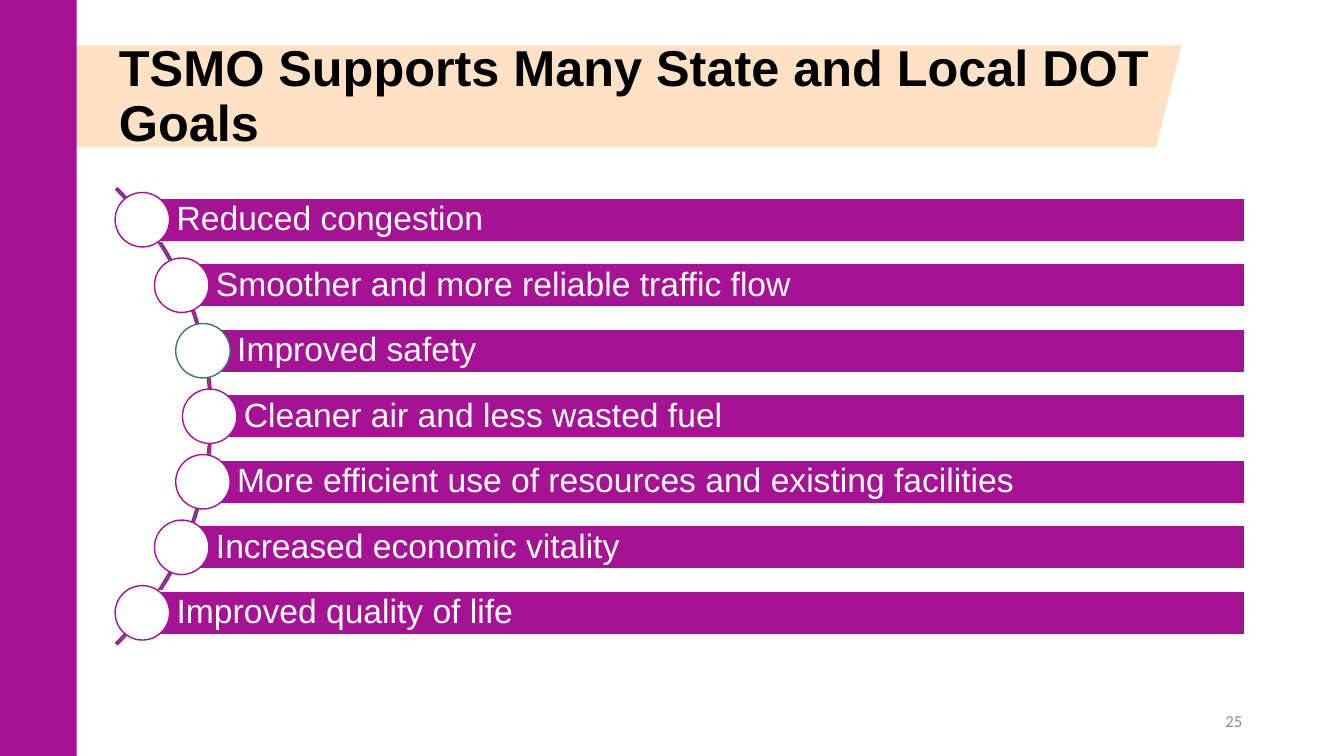
"""Build the slide listing the state and local goals that TSMO supports."""
import math

import pptx
import pptx.dml.color
import pptx.enum.shapes
import pptx.enum.text
import pptx.util

Inches = pptx.util.Inches
Pt = pptx.util.Pt
RGBColor = pptx.dml.color.RGBColor
SHAPE = pptx.enum.shapes.MSO_SHAPE
ALIGN = pptx.enum.text.PP_ALIGN
ANCHOR = pptx.enum.text.MSO_ANCHOR

PURPLE = RGBColor(0xA5, 0x13, 0x94)
GREEN = RGBColor(0x42, 0x76, 0x66)
PEACH = RGBColor(0xFF, 0xE2, 0xC5)
GRAY = RGBColor(0x8C, 0x8C, 0x8C)
WHITE = RGBColor(0xFF, 0xFF, 0xFF)
BLACK = RGBColor(0, 0, 0)

GOALS = [
    ("Reduced congestion", PURPLE),
    ("Smoother and more reliable traffic flow", PURPLE),
    ("Improved safety", GREEN),
    ("Cleaner air and less wasted fuel", PURPLE),
    ("More efficient use of resources and existing facilities", PURPLE),
    ("Increased economic vitality", PURPLE),
    ("Improved quality of life", PURPLE),
]
ARC_X, ARC_Y, ARC_SIZE = -1.1, 4.13, 6.41
RADIUS, ROW_STEP = 3.18, 0.65
BAR_RIGHT, BAR_HEIGHT, DOT = 12.35, 0.43, 0.54


class GoalSlide:
    def __init__(self, prs):
        self.slide = prs.slides.add_slide(prs.slide_layouts[5])
        self.shapes = self.slide.shapes

    def shape(self, kind, x, y, w, h, fill, line=None):
        sp = self.shapes.add_shape(kind, Inches(x), Inches(y), Inches(w), Inches(h))
        sp.shadow.inherit = False
        sp.fill.solid()
        sp.fill.fore_color.rgb = fill
        if line is None:
            sp.line.fill.background()
        else:
            sp.line.color.rgb = line
            sp.line.width = Pt(1)
        return sp

    def set_text(self, sp, text, size, color, font="Arial", align=ALIGN.LEFT,
                 anchor=ANCHOR.MIDDLE, bold=False, spacing=0.9):
        tf = sp.text_frame
        tf.word_wrap = True
        tf.auto_size = pptx.enum.text.MSO_AUTO_SIZE.NONE
        tf.vertical_anchor = anchor
        p = tf.paragraphs[0]
        p.text = text
        p.alignment = align
        p.line_spacing = spacing
        p.font.name = font
        p.font.size = Pt(size)
        p.font.bold = bold
        p.font.color.rgb = color
        return tf

    def title(self, text):
        sp = self.shapes.title
        sp.left, sp.top = Inches(1.08), Inches(0.38)
        sp.width, sp.height = Inches(10.44), Inches(0.55)
        self.set_text(sp, text, 36, BLACK, anchor=ANCHOR.TOP, bold=True)
        sp.element.getparent().append(sp.element)

    def arc(self):
        half = ARC_SIZE / 2
        sp = self.shape(SHAPE.BLOCK_ARC, ARC_X - half, ARC_Y - half,
                        ARC_SIZE, ARC_SIZE, GREEN, PURPLE)
        for i, value in enumerate((189, 27, 0.004)):
            sp.adjustments[i] = value

    def goal(self, row, text, outline):
        dy = (row - len(GOALS) // 2) * ROW_STEP
        x = ARC_X + math.sqrt(RADIUS ** 2 - dy ** 2)
        y = ARC_Y + dy
        bar = self.shape(SHAPE.RECTANGLE, x, y - BAR_HEIGHT / 2,
                         BAR_RIGHT - x, BAR_HEIGHT, PURPLE, WHITE)
        tf = self.set_text(bar, text, 24, WHITE)
        tf.margin_left = Inches(0.34)
        tf.margin_top = tf.margin_right = tf.margin_bottom = Inches(0.07)
        self.shape(SHAPE.OVAL, x - DOT / 2, y - DOT / 2, DOT, DOT, WHITE, outline)

    def page_number(self, text):
        sp = self.shapes.add_textbox(Inches(9.42), Inches(6.95), Inches(3), Inches(0.4))
        self.set_text(sp, text, 12, GRAY, font="Calibri", align=ALIGN.RIGHT, spacing=1.0)


def main():
    prs = pptx.Presentation()
    prs.slide_width, prs.slide_height = Inches(13.33), Inches(7.5)
    s = GoalSlide(prs)
    s.shape(SHAPE.PARALLELOGRAM, 0.24, 0.45, 11.48, 1.01, PEACH)
    s.shape(SHAPE.RECTANGLE, 0, 0, 0.76, 7.5, PURPLE)
    s.title("TSMO Supports Many State and Local DOT Goals")
    s.arc()
    for row, (text, outline) in enumerate(GOALS):
        s.goal(row, text, outline)
    s.page_number("25")
    prs.save("out.pptx")


if __name__ == "__main__":
    main()
